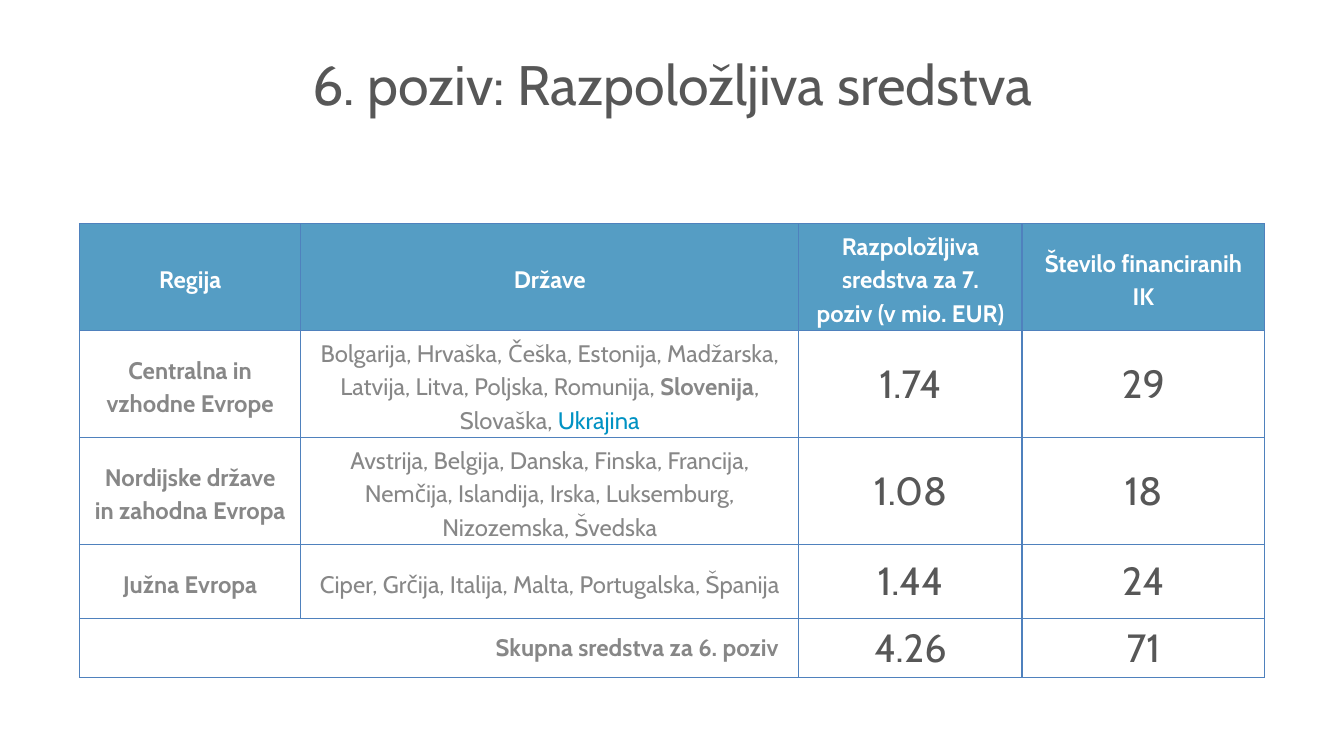
import dataclasses

import lxml.etree
import pptx
import pptx.dml.color
import pptx.enum.text
import pptx.oxml.ns
import pptx.util

Cm, Pt = pptx.util.Cm, pptx.util.Pt
Align = pptx.enum.text.PP_ALIGN
Anchor = pptx.enum.text.MSO_ANCHOR
qn = pptx.oxml.ns.qn


def rgb(code):
    return pptx.dml.color.RGBColor.from_string(code)


@dataclasses.dataclass(frozen=True)
class Theme:
    font: str = "Cabin"
    title: float = 39.6
    body: float = 17
    figure: float = 28
    dark: str = "575757"
    grey: str = "878787"
    white: str = "FFFFFF"
    head: str = "559DC4"
    accent: str = "0092C3"
    border: str = "4F81BD"


theme = Theme()


def style(para, size, color, bold=False, align=Align.CENTER):
    para.alignment = align
    font = para.font
    font.name, font.size, font.bold = theme.font, Pt(size), bold
    font.color.rgb = rgb(color)


deck = pptx.Presentation()
deck.slide_width, deck.slide_height = Cm(33.78), Cm(19)
slide = deck.slides.add_slide(deck.slide_layouts[5])

# Title
title = slide.shapes.title
title.left, title.top, title.width, title.height = Cm(6.91), Cm(1.12), Cm(19.96), Cm(2.79)
title.text_frame.text = "6. poziv: Razpoložljiva sredstva"
title.text_frame.vertical_anchor = Anchor.TOP
style(title.text_frame.paragraphs[0], theme.title, theme.dark)

# Funds by region
total = "Skupna sredstva za 6. poziv"
rows = [
    ["Regija", "Države", "Razpoložljiva sredstva za 7. poziv\u00a0(v mio. EUR)", "Število financiranih IK"],
    ["Centralna in vzhodne Evrope",
     "Bolgarija, Hrvaška, Češka, Estonija, Madžarska, Latvija, Litva, Poljska, Romunija, |Slovenija|, Slovaška, |Ukrajina",
     "1.74", "29"],
    ["Nordijske države in zahodna Evropa",
     "Avstrija, Belgija, Danska, Finska, Francija, Nemčija, Islandija, Irska, Luksemburg, Nizozemska, Švedska",
     "1.08", "18"],
    ["Južna Evropa", "Ciper, Grčija, Italija, Malta, Portugalska, Španija", "1.44", "24"],
    [total, "", "4.26", "71"],
]
widths = [5.56, 12.52, 5.61, 6.1]
heights = [2.69, 2.69, 2.69, 1.86, 1.47]
last = len(rows) - 1

table = slide.shapes.add_table(
    len(rows), len(widths), Cm(2), Cm(5.62), Cm(sum(widths)), Cm(sum(heights))
).table
table.first_row = table.horz_banding = False
for col, width in zip(table.columns, widths):
    col.width = Cm(width)
for row, height in zip(table.rows, heights):
    row.height = Cm(height)
table.cell(last, 0).merge(table.cell(last, 1))

for r, texts in enumerate(rows):
    for c, text in enumerate(texts):
        cell = table.cell(r, c)
        props = cell._tc.get_or_add_tcPr()
        for side in ("a:lnL", "a:lnR", "a:lnT", "a:lnB"):
            line = lxml.etree.SubElement(props, qn(side), w=str(Pt(1)))
            fill = lxml.etree.SubElement(line, qn("a:solidFill"))
            lxml.etree.SubElement(fill, qn("a:srgbClr"), val=theme.border)
        if r == 0:
            cell.fill.solid()
            cell.fill.fore_color.rgb = rgb(theme.head)
        else:
            cell.fill.background()
        if cell.is_spanned:
            continue

        cell.vertical_anchor = Anchor.MIDDLE
        para = cell.text_frame.paragraphs[0]
        for part in text.split("|"):
            run = para.add_run()
            run.text = part
            if part == "Slovenija":
                run.font.bold = True
            elif part == "Ukrajina":
                run.font.color.rgb = rgb(theme.accent)

        if r > 0 and c > 1:
            style(para, theme.figure, theme.dark)
            continue
        para.line_spacing = 1.15
        cell.margin_left = cell.margin_right = Cm(0.38)
        cell.margin_top, cell.margin_bottom = Cm(0.05), 0
        if r == 0:
            style(para, theme.body, theme.white, True)
        elif text == total:
            style(para, theme.body, theme.grey, True, Align.RIGHT)
            cell.vertical_anchor = Anchor.TOP
            cell.margin_left = cell.margin_right = Cm(0.51)
            cell.margin_top = cell.margin_bottom = Cm(0.25)
        else:
            style(para, theme.body, theme.grey, c == 0)

deck.save("out.pptx")
